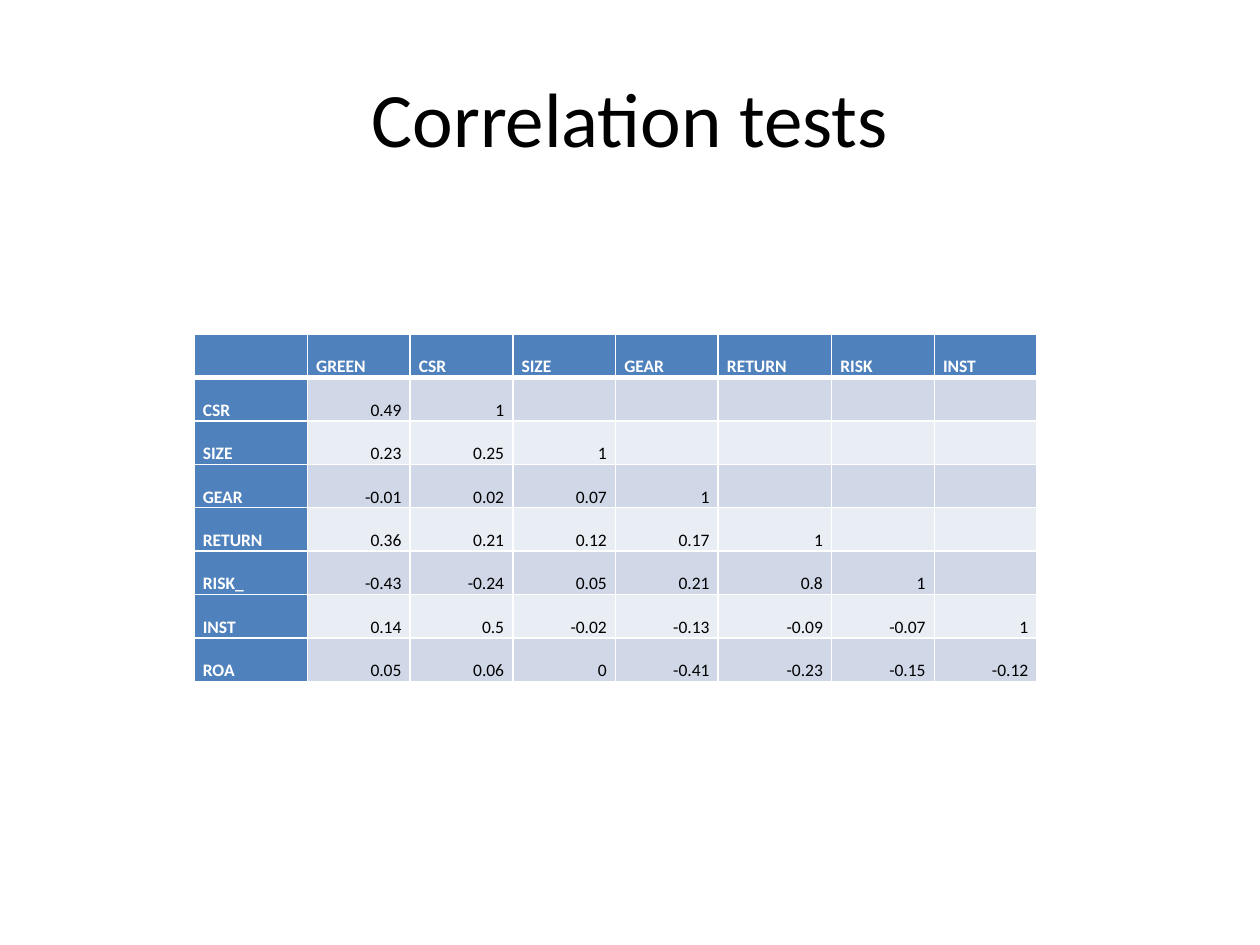
from lxml.etree import SubElement
from pptx import Presentation
from pptx.dml.color import RGBColor
from pptx.enum.text import MSO_ANCHOR, PP_ALIGN
from pptx.oxml import parse_xml
from pptx.oxml.ns import nsdecls, qn
from pptx.util import Inches, Pt

# Content
TITLE = "Correlation tests"
FACTORS = ["GREEN", "CSR", "SIZE", "GEAR", "RETURN", "RISK", "INST"]
CORRELATIONS = [
    ("CSR", ["0.49", "1"]),
    ("SIZE", ["0.23", "0.25", "1"]),
    ("GEAR", ["-0.01", "0.02", "0.07", "1"]),
    ("RETURN", ["0.36", "0.21", "0.12", "0.17", "1"]),
    ("RISK_", ["-0.43", "-0.24", "0.05", "0.21", "0.8", "1"]),
    ("INST", ["0.14", "0.5", "-0.02", "-0.13", "-0.09", "-0.07", "1"]),
    ("ROA", ["0.05", "0.06", "0", "-0.41", "-0.23", "-0.15", "-0.12"]),
]

THEME = {
    "font": "Calibri", "title_size": 44, "cell_size": 10,
    "text": "000000", "header_text": "FFFFFF", "header": "4F81BD",
    "bands": ("D0D8E8", "E9EDF4"), "border": "FFFFFF",
}

# Layout in inches
TABLE_LEFT, TABLE_TOP, TABLE_WIDTH, TABLE_HEIGHT = 1.54, 2.65, 6.69, 2.76
WIDE_COLUMNS, WIDE = (0, 5), 0.9


def write(frame, text, size, color, bold=False, align=PP_ALIGN.LEFT, spacing=None):
    paragraph = frame.paragraphs[0]
    paragraph.alignment = align
    paragraph.line_spacing = spacing
    if not text:
        # Keep the empty line as low as the filled ones
        SubElement(paragraph._p, qn("a:endParaRPr")).set("sz", str(size * 100))
        return
    run = paragraph.add_run()
    run.text = text
    run.font.name = THEME["font"]
    run.font.size = Pt(size)
    run.font.bold = bold
    run.font.color.rgb = RGBColor.from_string(color)


def set_borders(cell, widths):
    for position, (side, width) in enumerate(widths.items()):
        border = parse_xml(
            f'<a:ln{side} {nsdecls("a")} w="{Pt(width)}"><a:solidFill>'
            f'<a:srgbClr val="{THEME["border"]}"/></a:solidFill></a:ln{side}>')
        cell._tc.get_or_add_tcPr().insert(position, border)


def add_correlation_table(slide):
    grid = [["", *FACTORS]]
    for label, values in CORRELATIONS:
        grid.append([label, *values, *[""] * (len(FACTORS) - len(values))])
    row_count, column_count = len(grid), len(grid[0])
    table = slide.shapes.add_table(
        row_count, column_count, Inches(TABLE_LEFT), Inches(TABLE_TOP),
        Inches(TABLE_WIDTH), Inches(TABLE_HEIGHT)).table
    table.first_col = True

    # Two wide columns, the rest share what is left
    narrow = (TABLE_WIDTH - WIDE * len(WIDE_COLUMNS)) / (column_count - len(WIDE_COLUMNS))
    for index, column in enumerate(table.columns):
        column.width = Inches(WIDE if index in WIDE_COLUMNS else narrow)
    for row in table.rows:
        row.height = Inches(TABLE_HEIGHT / row_count)

    # Cells
    for r, texts in enumerate(grid):
        for c, text in enumerate(texts):
            cell = table.cell(r, c)
            is_header = r == 0 or c == 0
            fill = THEME["header"] if is_header else THEME["bands"][(r - 1) % 2]
            cell.fill.solid()
            cell.fill.fore_color.rgb = RGBColor.from_string(fill)
            cell.vertical_anchor = MSO_ANCHOR.BOTTOM
            cell.margin_left = cell.margin_right = Inches(0.07)
            cell.margin_top = cell.margin_bottom = 0
            set_borders(cell, {"L": 1, "R": 1, "T": 3 if r == 1 else 1,
                               "B": 3 if r == 0 else 1})
            write(cell.text_frame, text, THEME["cell_size"],
                  THEME["header_text" if is_header else "text"], bold=is_header,
                  align=PP_ALIGN.JUSTIFY if is_header else PP_ALIGN.RIGHT, spacing=1.15)


def main():
    presentation = Presentation()
    presentation.slide_width, presentation.slide_height = Inches(10), Inches(7.5)
    slide = presentation.slides.add_slide(presentation.slide_layouts[5])

    # Title
    title = slide.shapes.title
    title.left, title.top, title.width, title.height = map(Inches, (0.5, 0.3, 9, 1.25))
    title.text_frame.vertical_anchor = MSO_ANCHOR.MIDDLE
    write(title.text_frame, TITLE, THEME["title_size"], THEME["text"],
          align=PP_ALIGN.CENTER)

    add_correlation_table(slide)
    presentation.save("out.pptx")


if __name__ == "__main__":
    main()
